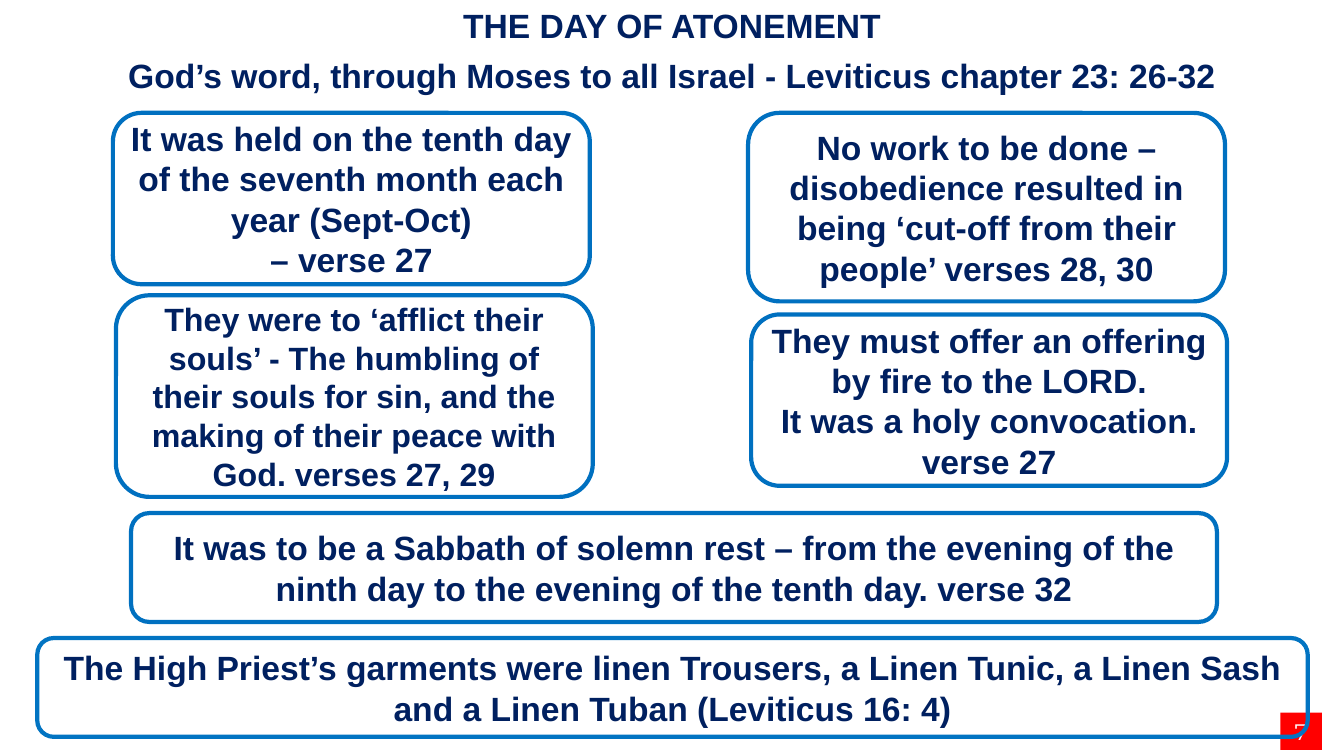
from pptx import Presentation, util as u
from pptx.dml.color import RGBColor
from pptx.enum import shapes, text

EMU_PER_PX = 9144  # 100 px to the inch


def px(length):
    return u.Emu(length * EMU_PER_PX)


def colour(hex_string):
    return RGBColor.from_string(hex_string)


def write(frame, *paragraphs, size=24, font="Arial", ink="002060", bold=True,
          anchor=text.MSO_ANCHOR.MIDDLE, side=10):
    """Fill a text frame with centred paragraphs in one format."""
    frame.word_wrap = True
    frame.auto_size = text.MSO_AUTO_SIZE.NONE
    frame.vertical_anchor = anchor
    frame.margin_left = frame.margin_right = px(side)
    frame.margin_top = frame.margin_bottom = px(5)
    for index, words in enumerate(paragraphs):
        paragraph = frame.add_paragraph() if index else frame.paragraphs[0]
        paragraph.alignment = text.PP_ALIGN.CENTER
        run = paragraph.add_run()
        run.text = words
        run.font.size = u.Pt(size)
        run.font.name = font
        run.font.bold = bold
        run.font.color.rgb = colour(ink)


class AtonementSlide:
    outline = "0070C0"
    outline_width = 3

    def __init__(self, deck):
        self.slide = deck.slides.add_slide(deck.slide_layouts[5])

    def title(self, words, left, top, width, height):
        heading = self.slide.shapes.title
        heading.left, heading.top = px(left), px(top)
        heading.width, heading.height = px(width), px(height)
        write(heading.text_frame, words)

    def label(self, words, *box):
        area = self.slide.shapes.add_textbox(*map(px, box))
        write(area.text_frame, words, anchor=text.MSO_ANCHOR.TOP)

    def card(self, paragraphs, *box, size=24, outline=None):
        panel = self.slide.shapes.add_shape(
            shapes.MSO_SHAPE.ROUNDED_RECTANGLE, *map(px, box))
        panel.shadow.inherit = False
        panel.fill.background()
        panel.line.color.rgb = colour(outline or self.outline)
        panel.line.width = u.Pt(self.outline_width)
        write(panel.text_frame, *paragraphs, size=size, side=8)

    def page_number(self, number, *box):
        badge = self.slide.shapes.add_shape(
            shapes.MSO_SHAPE.RECTANGLE, *map(px, box))
        badge.shadow.inherit = False
        badge.fill.solid()
        badge.fill.fore_color.rgb = colour("FF0000")
        badge.line.fill.background()
        write(badge.text_frame, number, size=16, font="Montserrat",
              ink="FFFFFF", bold=False)


def main():
    deck = Presentation()
    deck.slide_width, deck.slide_height = px(1333), px(750)
    page = AtonementSlide(deck)

    # Heading lines
    page.title("THE DAY OF ATONEMENT", 0, 0, 1333, 50)
    page.label("God’s word, through Moses to all Israel - "
               "Leviticus chapter 23: 26-32", 0, 50, 1333, 50)

    # Left column: date and humbling
    page.card(["It was held on the tenth day of the seventh month each year "
               "(Sept-Oct)", "– verse 27"], 112, 112, 473, 170)
    page.card(["They were to ‘afflict their souls’ - The humbling of their "
               "souls for sin, and the making of their peace with God. "
               "verses 27, 29"], 115, 293, 473, 200, size=23)

    # Right column: rest from work and offering
    page.card(["No work to be done – disobedience resulted in being "
               "‘cut-off from their people’ verses 28, 30"],
              742, 112, 473, 187)
    page.card(["They must offer an offering by fire to the LORD.",
               "It was a holy convocation. verse 27"], 745, 312, 472, 170)

    # Wide cards: Sabbath, then garments over the page number
    page.card(["It was to be a Sabbath of solemn rest – from the evening of "
               "the ninth day to the evening of the tenth day. verse 32"],
              130, 509, 1077, 108)
    page.page_number("7", 1270, 707, 41, 37)
    page.card(["The High Priest’s garments were linen Trousers, a Linen Tunic, "
               "a Linen Sash and a Linen Tuban (Leviticus 16: 4)"],
              37, 633, 1260, 98, outline="0274C2")

    deck.save("out.pptx")


if __name__ == "__main__":
    main()
